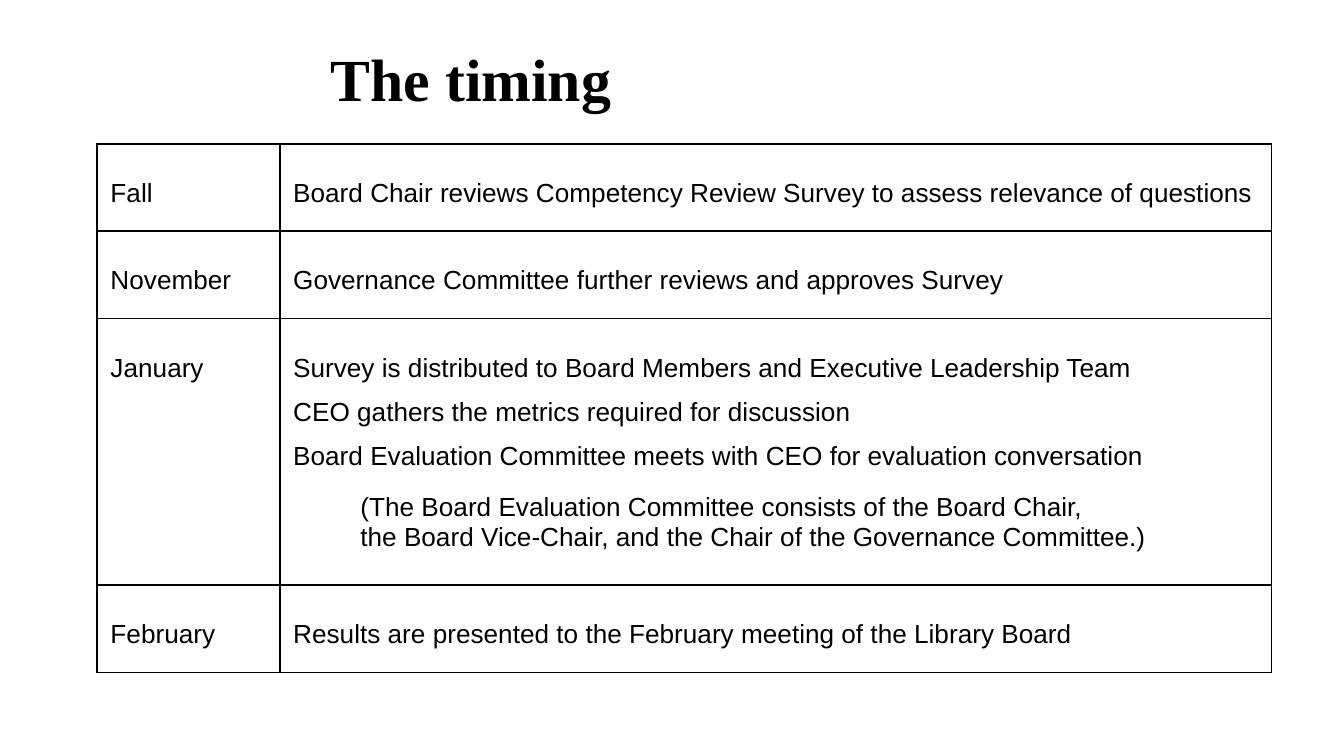
import dataclasses

import lxml.etree
import pptx
import pptx.dml.color
import pptx.enum.text
import pptx.oxml.ns
import pptx.presentation
import pptx.slide
import pptx.table
import pptx.text.text
import pptx.util

Pt = pptx.util.Pt


@dataclasses.dataclass(frozen=True)
class Theme:
    ink: str = "000000"
    paper: str = "FFFFFF"
    title_font: str = "Times New Roman"
    body_font: str = "Arial"
    title_size: float = 32
    body_size: float = 14
    border_width: float = 1


@dataclasses.dataclass(frozen=True)
class Line:
    runs: tuple[str, ...]  # runs are separated by line breaks
    spacing: float = 1.5
    space_after: float = 0
    level: int = 0
    left_indent: float = 0


@dataclasses.dataclass(frozen=True)
class Step:
    month: str
    lines: tuple[Line, ...]
    height: float = 45


THEME = Theme()
COLUMN_WIDTHS = (97.9, 531.4)
TABLE_LEFT, TABLE_TOP = 52, 77
CELL_INSET_X, CELL_INSET_Y = 7.2, 10.8

STEPS = (
    Step("Fall", (Line((
        "Board Chair reviews Competency Review Survey to assess relevance of questions",)),)),
    Step("November", (Line((
        "Governance Committee further reviews and approves Survey",)),)),
    Step("January", (
        Line(("Survey is distributed to Board Members and Executive Leadership Team",)),
        Line(("CEO gathers the metrics required for discussion",)),
        Line(("Board Evaluation Committee meets with CEO for evaluation conversation",),
             space_after=12),
        Line(("(The Board Evaluation Committee consists of the Board Chair, ",
              "the Board Vice-Chair, and the Chair of the Governance Committee.)"),
             spacing=1, level=1, left_indent=36),
    ), height=136),
    Step("February", (Line((
        "Results are presented to the February meeting of the Library Board",)),)),
)


def add_run(para: pptx.text.text._Paragraph, text: str, font: str, size: float,
            bold: bool = False) -> None:
    run = para.add_run()
    run.text = text
    run.font.name = font
    run.font.size = Pt(size)
    run.font.bold = bold
    run.font.color.rgb = pptx.dml.color.RGBColor.from_string(THEME.ink)


def set_borders(cell: pptx.table._Cell) -> None:
    """Put a solid line on all four sides; borders must precede the fill in the XML."""
    properties = cell._tc.get_or_add_tcPr()
    qn = pptx.oxml.ns.qn
    for position, side in enumerate(("a:lnL", "a:lnR", "a:lnT", "a:lnB")):
        border = lxml.etree.Element(qn(side), w=str(Pt(THEME.border_width)))
        fill = lxml.etree.SubElement(border, qn("a:solidFill"))
        lxml.etree.SubElement(fill, qn("a:srgbClr"), val=THEME.ink)
        properties.insert(position, border)


def fill_cell(cell: pptx.table._Cell, lines: tuple[Line, ...]) -> None:
    cell.margin_left = cell.margin_right = Pt(CELL_INSET_X)
    cell.margin_top = cell.margin_bottom = Pt(CELL_INSET_Y)
    cell.vertical_anchor = pptx.enum.text.MSO_ANCHOR.TOP
    cell.fill.solid()
    cell.fill.fore_color.rgb = pptx.dml.color.RGBColor.from_string(THEME.paper)
    set_borders(cell)
    for index, line in enumerate(lines):
        frame = cell.text_frame
        para = frame.add_paragraph() if index else frame.paragraphs[0]
        para.level = line.level
        para.line_spacing = line.spacing
        para.space_after = Pt(line.space_after)
        properties = para._p.get_or_add_pPr()
        properties.set("marL", str(Pt(line.left_indent)))
        properties.set("indent", "0")
        for run_index, text in enumerate(line.runs):
            if run_index:
                para.add_line_break()
            add_run(para, text, THEME.body_font, THEME.body_size)


def add_title(page: pptx.slide.Slide, text: str) -> None:
    box = page.shapes.title
    box.left, box.top, box.width, box.height = Pt(170), Pt(18.7), Pt(169), Pt(46)
    frame = box.text_frame
    frame.word_wrap = False
    frame.auto_size = pptx.enum.text.MSO_AUTO_SIZE.SHAPE_TO_FIT_TEXT
    frame.vertical_anchor = pptx.enum.text.MSO_ANCHOR.TOP
    para = frame.paragraphs[0]
    para.alignment = pptx.enum.text.PP_ALIGN.LEFT
    add_run(para, text, THEME.title_font, THEME.title_size, bold=True)


def add_schedule(page: pptx.slide.Slide, steps: tuple[Step, ...]) -> None:
    height = sum(step.height for step in steps)
    table = page.shapes.add_table(
        len(steps), len(COLUMN_WIDTHS), Pt(TABLE_LEFT), Pt(TABLE_TOP),
        Pt(sum(COLUMN_WIDTHS)), Pt(height)).table
    table.first_row = table.horz_banding = False
    for column, width in zip(table.columns, COLUMN_WIDTHS):
        column.width = Pt(width)
    for index, step in enumerate(steps):
        table.rows[index].height = Pt(step.height)
        fill_cell(table.cell(index, 0), (Line((step.month,)),))
        fill_cell(table.cell(index, 1), step.lines)


def build_deck() -> pptx.presentation.Presentation:
    deck = pptx.Presentation()
    deck.slide_width, deck.slide_height = Pt(720), Pt(405)
    page = deck.slides.add_slide(deck.slide_layouts.get_by_name("Title Only"))
    page.background.fill.solid()
    page.background.fill.fore_color.rgb = pptx.dml.color.RGBColor.from_string(THEME.paper)
    add_title(page, "The timing")
    add_schedule(page, STEPS)
    return deck


if __name__ == "__main__":
    build_deck().save("out.pptx")
